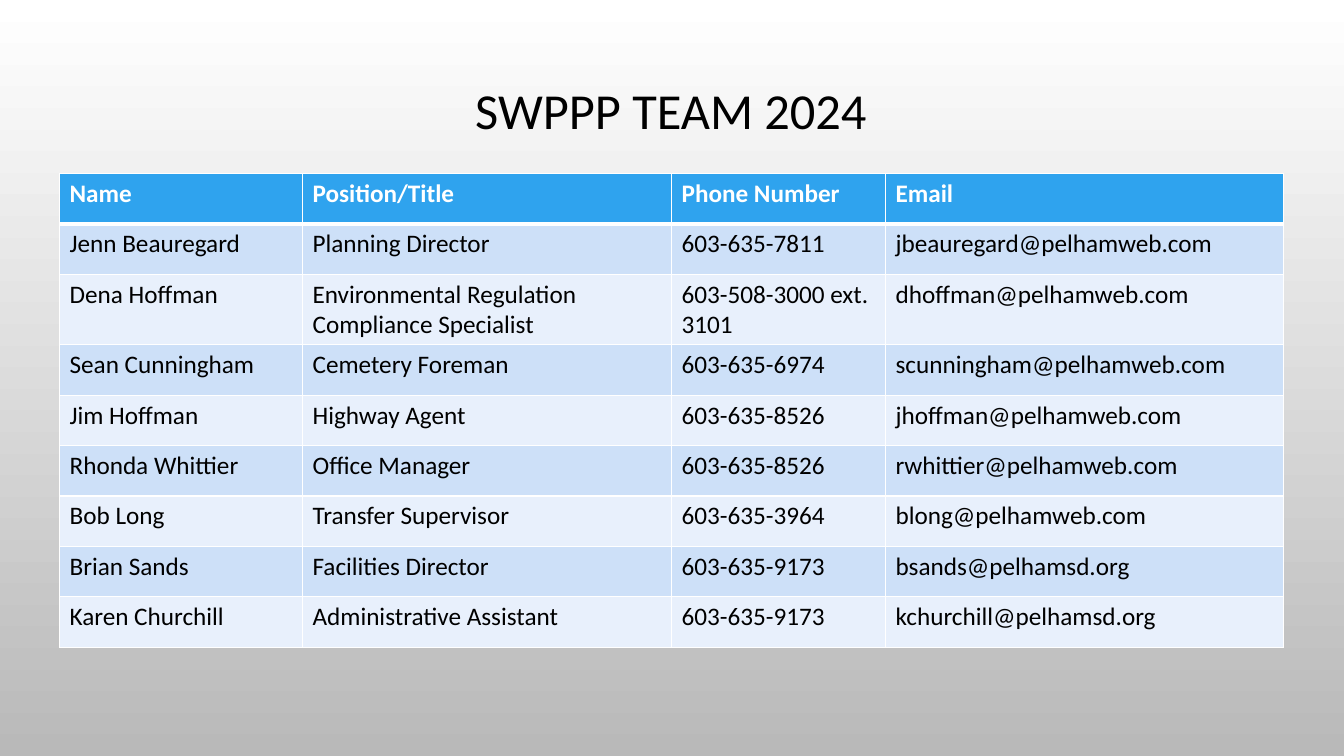
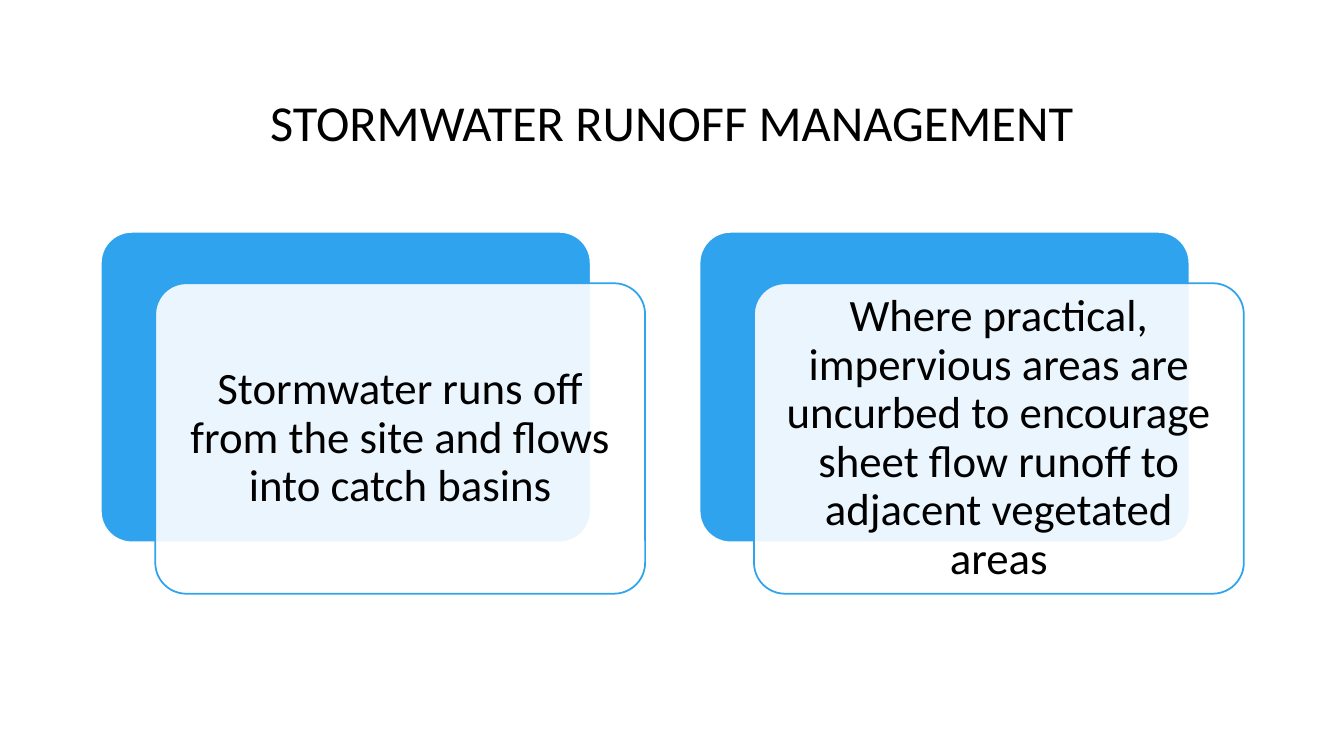
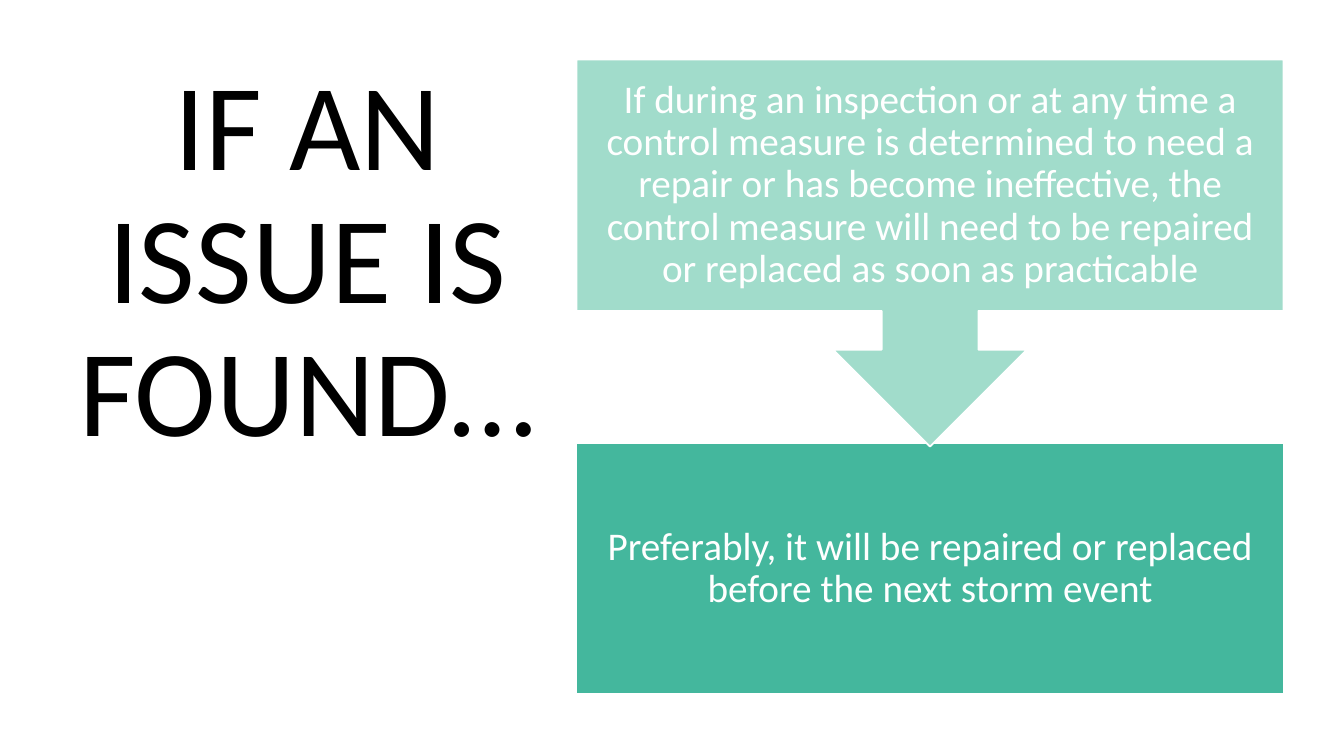
from dataclasses import dataclass
from typing import Optional

from lxml.etree import SubElement
from pptx import Presentation
from pptx.dml.color import RGBColor
from pptx.enum.shapes import MSO_SHAPE
from pptx.enum.text import MSO_ANCHOR, PP_ALIGN
from pptx.oxml.ns import qn
from pptx.slide import Slide
from pptx.util import Emu, Inches, Pt

COLORS = {
    "text": "000000",
    "white": "FFFFFF",
    "blue": "2FA3EE",
    "odd row": "CDE0F8",
    "even row": "E8F0FC",
    "page end": "B9B9B9",
    "mint": "A1DCCB",
    "green": "44B79D",
}
FONT = "Calibri"
SLIDE_WIDTH, SLIDE_HEIGHT = Inches(13.33), Inches(7.5)

TEAM_COLUMNS = (18.08, 27.46, 15.92, 29.61)
TEAM_ROW = 6.67
TEAM = (
    ("Name", "Position/Title", "Phone Number", "Email"),
    ("Jenn Beauregard", "Planning Director", "603-635-7811", "jbeauregard@pelhamweb.com"),
    ("Dena Hoffman", "Environmental Regulation Compliance Specialist",
     "603-508-3000 ext. 3101", "dhoffman@pelhamweb.com"),
    ("Sean Cunningham", "Cemetery Foreman", "603-635-6974", "scunningham@pelhamweb.com"),
    ("Jim Hoffman", "Highway Agent", "603-635-8526", "jhoffman@pelhamweb.com"),
    ("Rhonda Whittier", "Office Manager", "603-635-8526", "rwhittier@pelhamweb.com"),
    ("Bob Long", "Transfer Supervisor", "603-635-3964", "blong@pelhamweb.com"),
    ("Brian Sands", "Facilities Director", "603-635-9173", "bsands@pelhamsd.org"),
    ("Karen Churchill", "Administrative Assistant", "603-635-9173", "kchurchill@pelhamsd.org"),
)
RUNOFF_CARDS = (
    "Stormwater runs off from the site and flows into catch basins",
    "Where practical, impervious areas are uncurbed to encourage sheet flow runoff "
    "to adjacent vegetated areas",
)


@dataclass(frozen=True)
class Area:
    """A place in percent of the slide's width and height."""
    left: float
    top: float
    width: float
    height: float

    def shifted(self, across: float, down: float) -> "Area":
        """Return the same area moved across and down."""
        return Area(self.left + across, self.top + down, self.width, self.height)

    def lengths(self) -> tuple[Emu, Emu, Emu, Emu]:
        """Return left, top, width and height as lengths."""
        return across(self.left), down(self.top), across(self.width), down(self.height)


@dataclass(frozen=True)
class Panel:
    """A filled shape that may hold text."""
    area: Area
    kind: MSO_SHAPE
    fill: str
    line: str = "white"
    text: str = ""
    size: int = 28
    color: str = "white"
    inset: float = 0.22
    corner: Optional[float] = None
    opacity: int = 100


def across(percent: float) -> Emu:
    """Turn a share of the slide's width into a length."""
    return Emu(round(SLIDE_WIDTH * percent / 100))


def down(percent: float) -> Emu:
    """Turn a share of the slide's height into a length."""
    return Emu(round(SLIDE_HEIGHT * percent / 100))


def rgb(name: str) -> RGBColor:
    """Look up a colour by name."""
    return RGBColor.from_string(COLORS[name])


def write(frame, text: str, size: int, color: str, bold: bool = False) -> None:
    """Write one paragraph in the deck's font."""
    paragraph = frame.paragraphs[0]
    paragraph.text = text
    paragraph.font.name = FONT
    paragraph.font.size = Pt(size)
    paragraph.font.bold = bold
    paragraph.font.color.rgb = rgb(color)


def center(frame, anchor: MSO_ANCHOR) -> None:
    """Wrap and centre a text frame with tight lines."""
    frame.word_wrap = True
    frame.vertical_anchor = anchor
    frame.paragraphs[0].alignment = PP_ALIGN.CENTER
    frame.paragraphs[0].line_spacing = 0.9


def add_title(page: Slide, text: str, area: Area, size: int = 36,
              anchor: MSO_ANCHOR = MSO_ANCHOR.TOP) -> None:
    """Add a slide title."""
    frame = page.shapes.add_textbox(*area.lengths()).text_frame
    write(frame, text, size, "text")
    center(frame, anchor)


def add_panel(page: Slide, panel: Panel) -> None:
    """Draw a panel with its text."""
    shape = page.shapes.add_shape(panel.kind, *panel.area.lengths())
    shape.shadow.inherit = False
    shape.fill.solid()
    shape.fill.fore_color.rgb = rgb(panel.fill)
    shape.line.color.rgb = rgb(panel.line)
    shape.line.width = Pt(1.25)
    if panel.corner is not None:
        shape.adjustments[0] = panel.corner
    if panel.opacity < 100:
        color = shape.fill._xPr.find(qn("a:solidFill"))[0]
        SubElement(color, qn("a:alpha"), val=str(panel.opacity * 1000))
    if panel.text:
        frame = shape.text_frame
        frame.margin_left = frame.margin_right = Inches(panel.inset)
        frame.margin_top = frame.margin_bottom = Inches(panel.inset)
        write(frame, panel.text, panel.size, panel.color)
        center(frame, MSO_ANCHOR.MIDDLE)


def add_borders(cell, widths: dict[str, int]) -> None:
    """Give a cell white borders of the given widths by side."""
    properties = cell._tc.get_or_add_tcPr()
    for position, (side, width) in enumerate(widths.items()):
        border = SubElement(properties, qn(f"a:ln{side}"), w=str(Pt(width)))
        fill = SubElement(border, qn("a:solidFill"))
        SubElement(fill, qn("a:srgbClr"), val=COLORS["white"])
        properties.insert(position, border)


def add_team_table(page: Slide, area: Area) -> None:
    """Add the banded table of team members."""
    table = page.shapes.add_table(len(TEAM), len(TEAM_COLUMNS), *area.lengths()).table
    for column, width in zip(table.columns, TEAM_COLUMNS):
        column.width = across(width)
    for index, (row, texts) in enumerate(zip(table.rows, TEAM)):
        header = index == 0
        row.height = down(TEAM_ROW)
        band = "blue" if header else "odd row" if index % 2 else "even row"
        borders = {"L": 1, "R": 1, "T": 1, "B": 3} if header else {"L": 1, "R": 1, "B": 1}
        for cell, text in zip(row.cells, texts):
            cell.fill.solid()
            cell.fill.fore_color.rgb = rgb(band)
            add_borders(cell, borders)
            write(cell.text_frame, text, 18, "white" if header else "text", header)


def build_team(page: Slide) -> None:
    """Build the team slide on its gradient."""
    fill = page.background.fill
    fill.gradient()
    fill.gradient_angle = 270
    for stop, color in zip(fill.gradient_stops, ("white", "page end")):
        stop.color.rgb = rgb(color)
    add_title(page, "SWPPP TEAM 2024", Area(7.43, 3.33, 85, 23.33), anchor=MSO_ANCHOR.MIDDLE)
    add_team_table(page, Area(4.43, 22.93, sum(TEAM_COLUMNS), TEAM_ROW * len(TEAM)))


def build_runoff(page: Slide) -> None:
    """Build the runoff slide with its layered cards."""
    add_title(page, "STORMWATER RUNOFF MANAGEMENT", Area(7.5, 12.27, 85, 23.33))
    first = Area(7.5, 30.67, 36.45, 41.07)
    for index, text in enumerate(RUNOFF_CARDS):
        back = first.shifted(index * 44.55, 0)
        add_panel(page, Panel(back, MSO_SHAPE.ROUNDED_RECTANGLE, "blue", corner=0.1))
        add_panel(page, Panel(back.shifted(4.05, 6.8), MSO_SHAPE.ROUNDED_RECTANGLE, "white",
                              "blue", text, 32, "text", 0.13, 0.1, 90))


def build_issue(page: Slide) -> None:
    """Build the issue slide with its two steps."""
    add_title(page, "IF AN ISSUE IS FOUND…", Area(4.43, 7.87, 36.9, 84), 88)
    add_panel(page, Panel(
        Area(42.9, 58.6, 52.6, 33.2), MSO_SHAPE.RECTANGLE, "green",
        text="Preferably, it will be repaired or replaced before the next storm event"))
    add_panel(page, Panel(
        Area(42.9, 7.87, 52.6, 51.2), MSO_SHAPE.DOWN_ARROW_CALLOUT, "mint",
        text="If during an inspection or at any time a control measure is determined to "
             "need a repair or has become ineffective, the control measure will need to "
             "be repaired or replaced as soon as practicable"))


def main() -> None:
    """Build and save the deck."""
    deck = Presentation()
    deck.slide_width, deck.slide_height = SLIDE_WIDTH, SLIDE_HEIGHT
    for build in (build_team, build_runoff, build_issue):
        page = deck.slides.add_slide(deck.slide_layouts[6])
        page.background.fill.solid()
        page.background.fill.fore_color.rgb = rgb("white")
        build(page)
    deck.save("out.pptx")


if __name__ == "__main__":
    main()
